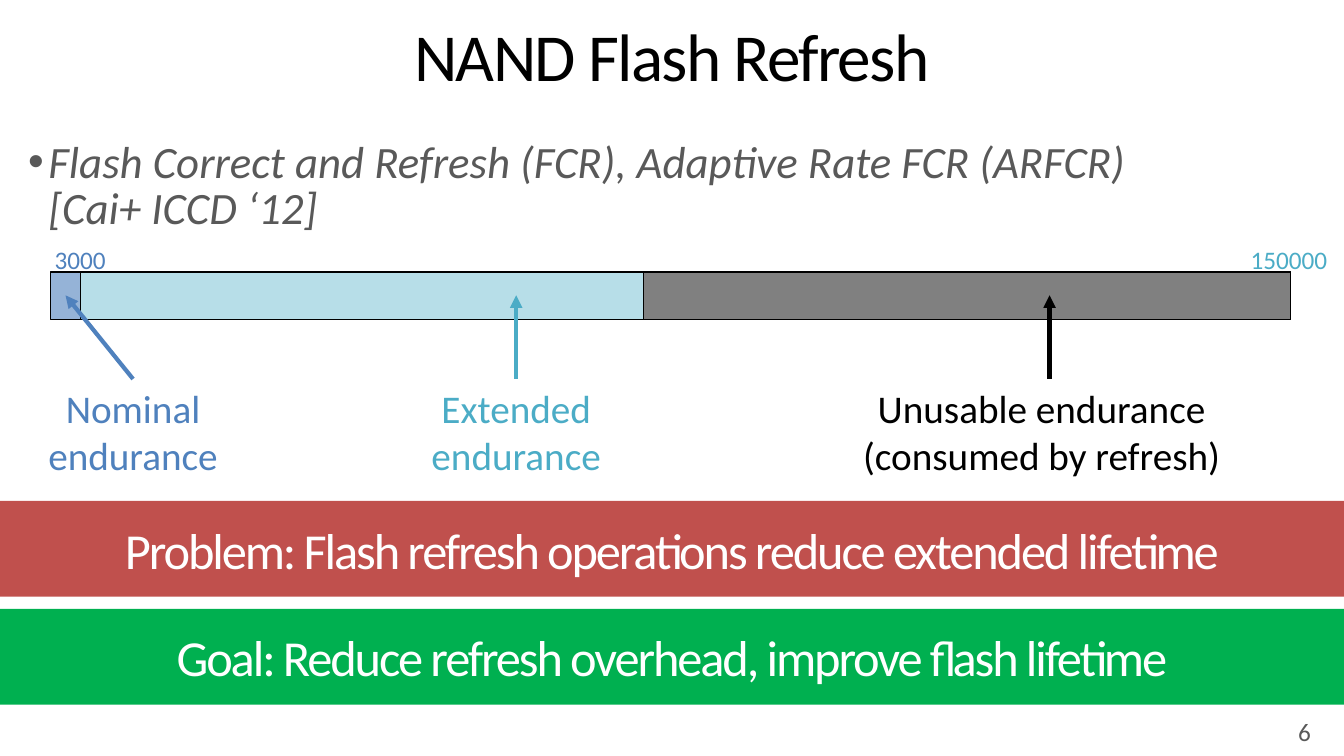
from dataclasses import dataclass
from lxml.etree import SubElement
from pptx import Presentation
from pptx.dml.color import RGBColor as RGB
from pptx.enum.shapes import MSO_CONNECTOR as Conn, MSO_SHAPE as Shape
from pptx.enum.text import MSO_ANCHOR as Anchor, MSO_AUTO_SIZE as Fit, PP_ALIGN as Align
from pptx.oxml.ns import qn
from pptx.util import Inches, Pt


@dataclass(frozen=True)
class Theme:
    """Colours and type sizes of the slide."""
    font: str = "Calibri"
    black: str = "000000"
    white: str = "FFFFFF"
    text: str = "595959"
    blue: str = "4F81BD"
    teal: str = "4BACC6"
    pale_blue: str = "95B3D7"
    pale_teal: str = "B7DEE8"
    gray: str = "808080"
    red: str = "C0504D"
    green: str = "00B050"
    title: int = 48
    banner: int = 36
    body: int = 32
    label: int = 28
    small: int = 18


THEME = Theme()
BAR_TOP, BAR_TALL = 2.7, 0.47
NOTE_TOP, TIP_TOP = 3.76, 2.93


def place(shape, left, top, width, height):
    """Move and size a shape."""
    shape.left, shape.top = Inches(left), Inches(top)
    shape.width, shape.height = Inches(width), Inches(height)


def write(shape, text, size, color, align=Align.CENTER, anchor=Anchor.TOP, space=0):
    """Fill a shape with one styled paragraph and return it."""
    frame = shape.text_frame
    frame.text = text
    frame.word_wrap = True
    frame.auto_size = Fit.NONE
    frame.vertical_anchor = anchor
    para = frame.paragraphs[0]
    para.alignment = align
    para.space_before = Pt(0)
    para.font.name = THEME.font
    para.font.size = Pt(size)
    para.font.color.rgb = RGB.from_string(color)
    if space:
        for run in para.runs:
            run._r.get_or_add_rPr().set("spc", str(space))
    return para


def add_title(slide, text):
    """Put the heading in the title placeholder."""
    title = slide.shapes.title
    place(title, 0, 0, 13.33, 1.19)
    para = write(title, text, THEME.title, THEME.black, anchor=Anchor.MIDDLE, space=-120)
    para.line_spacing = 0.9


def add_body(slide, text):
    """Put one bullet in the body placeholder."""
    body = slide.placeholders[1]
    place(body, 0.18, 1.36, 12.97, 5.71)
    body.text_frame.text = text
    props = body.text_frame.paragraphs[0]._p.get_or_add_pPr()
    props.set("marL", str(Inches(0.2)))
    props.set("indent", str(Inches(-0.2)))
    SubElement(props, qn("a:buChar")).set("char", "•")
    frame = body.text_frame
    para = frame.paragraphs[0]
    frame.word_wrap = True
    frame.auto_size = Fit.NONE
    para.line_spacing = 0.85
    para.space_before = Pt(0)
    para.font.name = THEME.font
    para.font.size = Pt(THEME.body)
    para.font.italic = True
    para.font.color.rgb = RGB.from_string(THEME.text)


def add_rect(slide, left, top, width, height, fill):
    """Draw a plain filled rectangle."""
    rect = slide.shapes.add_shape(
        Shape.RECTANGLE, Inches(left), Inches(top), Inches(width), Inches(height))
    rect.shadow.inherit = False
    rect.fill.solid()
    rect.fill.fore_color.rgb = RGB.from_string(fill)
    rect.line.fill.background()
    return rect


def add_bar(slide, left, width, fill):
    """Draw one outlined part of the endurance bar."""
    bar = add_rect(slide, left, BAR_TOP, width, BAR_TALL, fill)
    bar.line.color.rgb = RGB.from_string(THEME.black)
    bar.line.width = Pt(1)


def add_label(slide, left, top, width, height, text, size, color, **style):
    """Add a text box and return it."""
    box = slide.shapes.add_textbox(
        Inches(left), Inches(top), Inches(width), Inches(height))
    write(box, text, size, color, **style)
    return box


def add_note(slide, left, width, text, color, start, tip):
    """Add a label with an arrow up to the bar."""
    box = add_label(slide, left, NOTE_TOP, width, 1.04, text, THEME.label, color)
    arrow = slide.shapes.add_connector(
        Conn.STRAIGHT, Inches(start), Inches(NOTE_TOP), Inches(tip), Inches(TIP_TOP))
    if abs(left + width / 2 - start) < 0.01:
        arrow.begin_connect(box, 0)
    arrow.line.color.rgb = RGB.from_string(color)
    arrow.line.width = Pt(3)
    SubElement(arrow.line._get_or_add_ln(), qn("a:tailEnd")).set("type", "triangle")
    SubElement(arrow._element.spPr, qn("a:effectLst"))


def add_banner(slide, top, text, fill):
    """Draw a full-width band with its message."""
    band = add_rect(slide, 0, top, 13.33, 0.95, fill)
    write(band, text, THEME.banner, THEME.white, anchor=Anchor.MIDDLE, space=-150)


def main():
    """Build the slide and save it."""
    deck = Presentation()
    deck.slide_width, deck.slide_height = Inches(13.33), Inches(7.5)
    slide = deck.slides.add_slide(deck.slide_layouts[1])
    add_title(slide, "NAND Flash Refresh")
    add_body(slide, "Flash Correct and Refresh (FCR), Adaptive Rate FCR (ARFCR)\v[Cai+ ICCD ‘12]")
    add_label(slide, 10.1, 7.06, 3, 0.4, "6", THEME.small, THEME.text,
              align=Align.RIGHT, anchor=Anchor.MIDDLE)

    add_banner(slide, 4.97, "Problem: Flash refresh operations reduce extended lifetime", THEME.red)
    add_banner(slide, 6.04, "Goal: Reduce refresh overhead, improve flash lifetime", THEME.green)

    for left, width, fill in (
        (0.5, 0.3, THEME.pale_blue),
        (0.8, 12, THEME.pale_teal),
        (6.38, 6.42, THEME.gray),
    ):
        add_bar(slide, left, width, fill)

    for note in (
        (0.3, 2.04, "Nominal endurance", THEME.blue, 1.32, 0.65),
        (4.1, 2.04, "Extended endurance", THEME.teal, 5.12, 5.12),
        (8.17, 4.32, "Unusable endurance (consumed by refresh)", THEME.black, 10.41, 10.41),
    ):
        add_note(slide, *note)

    for left, width, text, color in (
        (0.44, 0.71, "3000", THEME.blue),
        (12.3, 0.97, "150000", THEME.teal),
    ):
        box = add_label(slide, left, 2.37, width, 0.4, text, THEME.small, color)
        box.text_frame.word_wrap = False

    deck.save("out.pptx")


if __name__ == "__main__":
    main()
